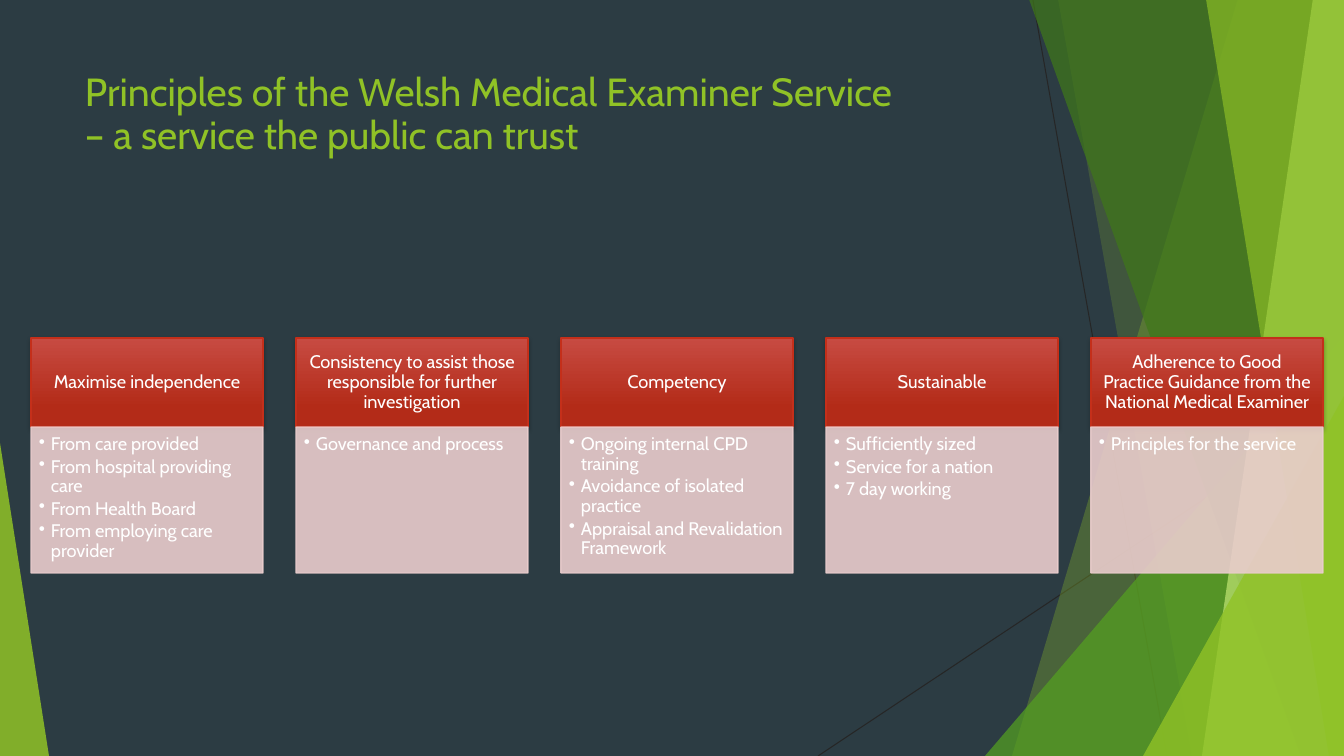
from lxml import etree
from pptx import Presentation
from pptx import util as u
from pptx.dml.color import RGBColor
from pptx.enum import shapes, text
from pptx.oxml.ns import qn

TITLE = "Principles of the Welsh Medical Examiner Service\v– a service the public can trust"
PRINCIPLES = [
    ("Maximise independence",
     ["From care provided", "From hospital providing care", "From Health Board",
      "From employing care provider"]),
    ("Consistency to assist those responsible for further investigation",
     ["Governance and process"]),
    ("Competency",
     ["Ongoing internal CPD training", "Avoidance of isolated practice",
      "Appraisal and Revalidation Framework"]),
    ("Sustainable",
     ["Sufficiently sized", "Service for a nation", "7 day working"]),
    ("Adherence to Good Practice Guidance from the National Medical Examiner",
     ["Principles for the service"]),
]


class Theme:
    font = "Cabin"
    title_size, card_size = 28, 13
    background, hairline = "2C3C43", "262626"
    green, leaf, forest, lime = "90C226", "54A021", "3F7819", "C0E474"
    red_top, red_bottom, red_line = "C74B42", "B32B18", "C42F1A"
    pink, white, shadow = "EACDCD", "FFFFFF", "000000"


WIDTH, HEIGHT = 1344, 756
HAIRLINES = [((1033, 0), (1167, HEIGHT)), ((WIDTH, 406), (818, HEIGHT))]
# ribbon: top x, bottom x; triangle: left, top, width, apex
DECORATION = [
    ("ribbon", (1238, 1012), Theme.green, 30),
    ("ribbon", (1058, 1192), Theme.green, 20),
    ("triangle", (985, 336, 359, 1), Theme.leaf, 72),
    ("ribbon", (1029, 1301), Theme.forest, 70),
    ("ribbon", (1313, 1202), Theme.lime, 70),
    ("ribbon", (1206, 1329), Theme.green, 65),
    ("triangle", (1143, 396, 201, 1), Theme.green, 80),
    ("triangle", (0, 443, 49, 0), Theme.green, 85),
]
CARD_LEFT, CARD_TOP, CARD_WIDTH, CARD_PITCH = 31, 338, 232, 265
HEAD_HEIGHT, BODY_HEIGHT = 89, 146
BULLET_INDENT = 12


def px(value):
    return round(value * 914400 / 100.8)


def rgb(value):
    return RGBColor.from_string(value)


def add_element(parent, tag, **attributes):
    element = etree.SubElement(parent, qn(tag))
    for name, value in attributes.items():
        element.set(name, str(value))
    return element


def paint(fill, color, opacity):
    fill.solid()
    fill.fore_color.rgb = rgb(color)
    color_element = fill._xPr.find(qn("a:solidFill"))[0]
    add_element(color_element, "a:alpha", val=opacity * 1000)


def add_hairline(slide, start, end):
    line = slide.shapes.add_connector(
        shapes.MSO_CONNECTOR.STRAIGHT, *map(px, start + end))
    line.line.color.rgb = rgb(Theme.hairline)
    line.line.width = u.Pt(0.75)
    add_element(line._element.spPr, "a:effectLst")


def add_decoration(slide, kind, geometry, color, opacity):
    if kind == "ribbon":
        top_x, bottom_x = geometry
        builder = slide.shapes.build_freeform(px(top_x), px(-1))
        corners = [(WIDTH, -1), (WIDTH, HEIGHT), (bottom_x, HEIGHT)]
        builder.add_line_segments([(px(x), px(y)) for x, y in corners])
        shape = builder.convert_to_shape()
    else:
        left, top, width, apex = geometry
        shape = slide.shapes.add_shape(
            shapes.MSO_SHAPE.ISOSCELES_TRIANGLE,
            px(left), px(top), px(width), px(HEIGHT - top))
        shape.adjustments[0] = apex
    shape.shadow.inherit = False
    shape.line.fill.background()
    paint(shape.fill, color, opacity)


def write(shape, lines, size, color, insets, anchor, alignment):
    frame = shape.text_frame
    frame.word_wrap = True
    frame.vertical_anchor = anchor
    (frame.margin_left, frame.margin_top,
     frame.margin_right, frame.margin_bottom) = map(px, insets)
    for index, line in enumerate(lines):
        paragraph = frame.add_paragraph() if index else frame.paragraphs[0]
        paragraph.text = line
        paragraph.alignment = alignment
        paragraph.line_spacing = 0.9
        paragraph.font.name = Theme.font
        paragraph.font.size = u.Pt(size)
        paragraph.font.color.rgb = rgb(color)
    return frame.paragraphs


def add_box(slide, left, top, height):
    box = slide.shapes.add_shape(
        shapes.MSO_SHAPE.RECTANGLE, px(left), px(top), px(CARD_WIDTH), px(height))
    box.shadow.inherit = False
    box.line.width = u.Pt(1)
    return box


def add_head(slide, left, heading):
    head = add_box(slide, left, CARD_TOP, HEAD_HEIGHT)
    head.fill.gradient()
    head.fill.gradient_angle = 270
    stops = [(0, Theme.red_top), (0.78, Theme.red_bottom)]
    for stop, (position, color) in zip(head.fill.gradient_stops, stops):
        stop.position = position
        stop.color.rgb = rgb(color)
    head.line.color.rgb = rgb(Theme.red_line)
    effects = head._element.spPr.find(qn("a:effectLst"))
    shadow = add_element(effects, "a:outerShdw", blurRad=u.Pt(3), dist=u.Pt(2),
                         dir=90 * 60000, rotWithShape=0)
    shade = add_element(shadow, "a:srgbClr", val=Theme.shadow)
    add_element(shade, "a:alpha", val=35000)
    write(head, [heading], Theme.card_size, Theme.white, (10, 6, 10, 6),
          text.MSO_ANCHOR.MIDDLE, text.PP_ALIGN.CENTER)


def add_body(slide, left, points):
    body = add_box(slide, left, CARD_TOP + HEAD_HEIGHT, BODY_HEIGHT)
    paint(body.fill, Theme.pink, 90)
    paint(body.line.fill, Theme.pink, 90)
    paragraphs = write(body, points, Theme.card_size, Theme.white, (8, 8, 10, 11),
                       text.MSO_ANCHOR.TOP, text.PP_ALIGN.LEFT)
    for paragraph in paragraphs:
        paragraph.space_after = u.Pt(2)
        properties = paragraph._p.get_or_add_pPr()
        properties.set("marL", str(px(BULLET_INDENT)))
        properties.set("indent", str(-px(BULLET_INDENT)))
        bullet = etree.Element(qn("a:buChar"), char="•")
        properties.find(qn("a:defRPr")).addprevious(bullet)


def main():
    presentation = Presentation()
    presentation.slide_width, presentation.slide_height = px(WIDTH), px(HEIGHT)
    slide = presentation.slides.add_slide(presentation.slide_layouts[6])
    slide.background.fill.solid()
    slide.background.fill.fore_color.rgb = rgb(Theme.background)
    for start, end in HAIRLINES:
        add_hairline(slide, start, end)
    for item in DECORATION:
        add_decoration(slide, *item)
    title = slide.shapes.add_textbox(px(75), px(68), px(948), px(145))
    write(title, [TITLE], Theme.title_size, Theme.green, (10, 5, 10, 5),
          text.MSO_ANCHOR.TOP, text.PP_ALIGN.LEFT)
    for index, (heading, points) in enumerate(PRINCIPLES):
        left = CARD_LEFT + index * CARD_PITCH
        add_head(slide, left, heading)
        add_body(slide, left, points)
    presentation.save("out.pptx")


if __name__ == "__main__":
    main()
